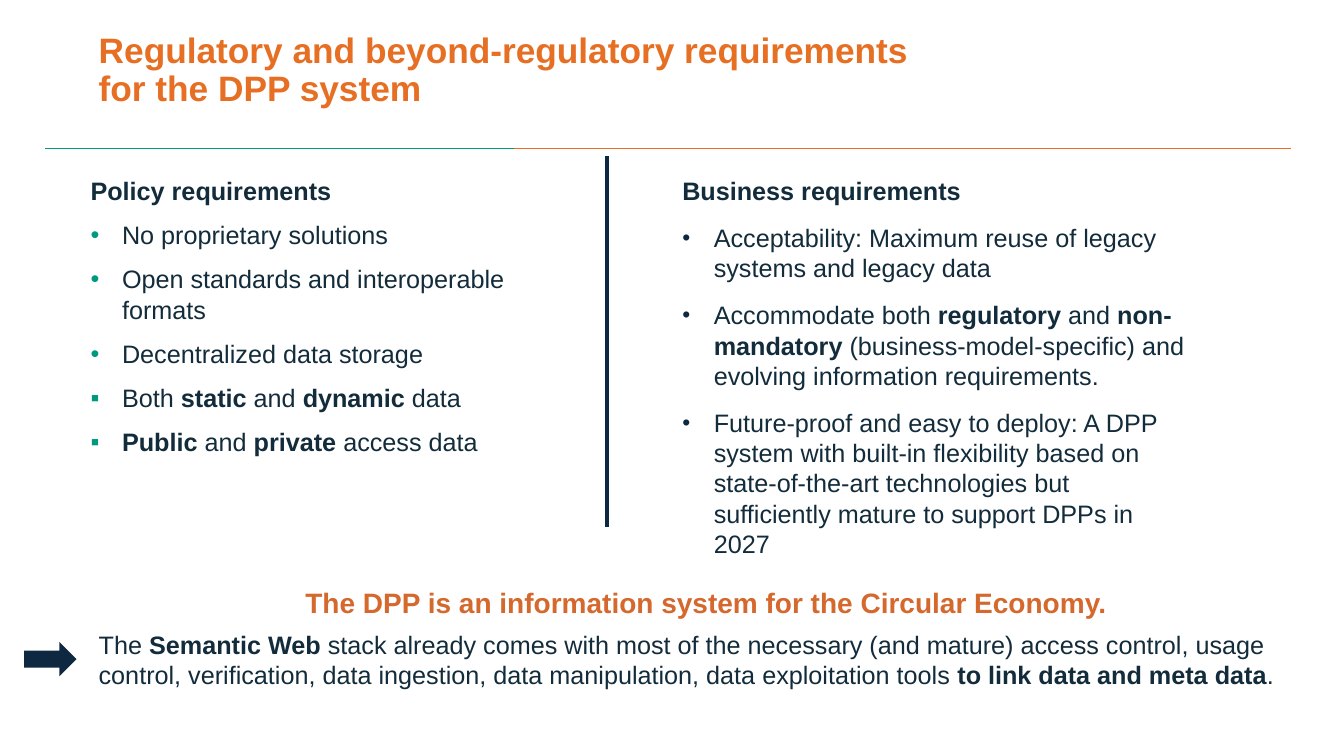
"""Build the slide on regulatory and business requirements for the DPP system."""
from pptx import Presentation
from pptx.dml.color import RGBColor
from pptx.enum.shapes import MSO_CONNECTOR, MSO_SHAPE
from pptx.enum.text import MSO_ANCHOR
from pptx.oxml.ns import qn
from pptx.util import Pt
from lxml.etree import SubElement

HUES = {"green": "00997F", "orange": "E66F23", "rust": "D5682D",
        "ink": "132C3B", "navy": "0E2841"}


def add_box(left, top, width, height, wrap=True, inset=7.2):
    """Add an empty text box and return its text frame."""
    frame = slide.shapes.add_textbox(Pt(left), Pt(top), Pt(width), Pt(height)).text_frame
    frame.word_wrap = wrap
    frame.margin_left = frame.margin_right = Pt(inset)
    return frame


def add_runs(para, text, size=18, hue="ink"):
    """Add runs to a paragraph, with bold between asterisks."""
    for i, part in enumerate(text.split("*")):
        if part:
            run = para.add_run()
            run.text = part
            run.font.name = "Arial"
            run.font.size = Pt(size)
            run.font.bold = i % 2 == 1
            run.font.color.rgb = RGBColor.from_string(HUES[hue])


deck = Presentation()
deck.slide_width, deck.slide_height = Pt(960), Pt(540)
slide = deck.slides.add_slide(deck.slide_layouts[6])

rules = [
    (32.4, 106, 367.2, 106, "green", 1),
    (367.2, 106, 922.3, 106, "orange", 1),
    (433.4, 111.6, 433.4, 376.6, "navy", 3),
]
for x1, y1, x2, y2, hue, width in rules:
    rule = slide.shapes.add_connector(MSO_CONNECTOR.STRAIGHT, Pt(x1), Pt(y1), Pt(x2), Pt(y2))
    rule.line.color.rgb = RGBColor.from_string(HUES[hue])
    rule.line.width = Pt(width)
    SubElement(rule._element.spPr, qn("a:effectLst"))

title = add_box(63.4, 21.6, 620.6, 58.3)
title.vertical_anchor = MSO_ANCHOR.MIDDLE
title.paragraphs[0].line_spacing = 0.9
add_runs(title.paragraphs[0],
         "*Regulatory and beyond-regulatory requirements for the DPP system*", 25.2, "orange")

columns = [
    (57.6, 7.2, 10, "green", 100, "Policy requirements", [
        ("•", "No proprietary solutions"),
        ("•", "Open standards and interoperable formats"),
        ("•", "Decentralized data storage"),
        ("▪", "Both *static* and *dynamic* data"),
        ("▪", "*Public* and *private* access data"),
    ]),
    (487.4, 0, 12, "navy", 90, "Business requirements", [
        ("•", "Acceptability: Maximum reuse of legacy systems and legacy data"),
        ("•", "Accommodate both *regulatory *and *non-mandatory* "
              "(business-model-specific) and evolving information requirements."),
        ("•", "Future-proof and easy to deploy: A DPP system with built-in flexibility "
              "based on state-of-the-art technologies but sufficiently mature "
              "to support DPPs in 2027"),
    ]),
]
for left, inset, gap, hue, scale, head, items in columns:
    frame = add_box(left, 121.7, 364.3, 357.1, inset=inset)
    add_runs(frame.paragraphs[0], f"*{head}*")
    for mark, text in items:
        para = frame.add_paragraph()
        props = para._p.get_or_add_pPr()
        props.set("marL", str(Pt(22.5)))
        props.set("indent", str(-Pt(22.5)))
        SubElement(SubElement(props, qn("a:buClr")), qn("a:srgbClr"), val=HUES[hue])
        SubElement(props, qn("a:buSzPct"), val=str(scale * 1000))
        SubElement(props, qn("a:buFont"), typeface="Arial")
        SubElement(props, qn("a:buChar"), char=mark)
        para.space_before = Pt(gap)
        add_runs(para, text)

stack = add_box(63.4, 445.7, 902.2, 51.1)
add_runs(stack.paragraphs[0],
         "The *Semantic Web *stack already comes with most of the necessary (and mature) "
         "access control, usage control, verification, data ingestion, data manipulation, "
         "data exploitation tools *to link data and meta data*.")

arrow = slide.shapes.add_shape(MSO_SHAPE.RIGHT_ARROW, Pt(17.3), Pt(458.6), Pt(37.4), Pt(24.5))
arrow.shadow.inherit = False
arrow.fill.solid()
arrow.fill.fore_color.rgb = RGBColor.from_string(HUES["navy"])
arrow.line.fill.background()

claim = add_box(211, 414.7, 593.3, 31.7, wrap=False)
add_runs(claim.paragraphs[0],
         "*The DPP is an information system for the Circular Economy.*", 20, "rust")

deck.save("out.pptx")
